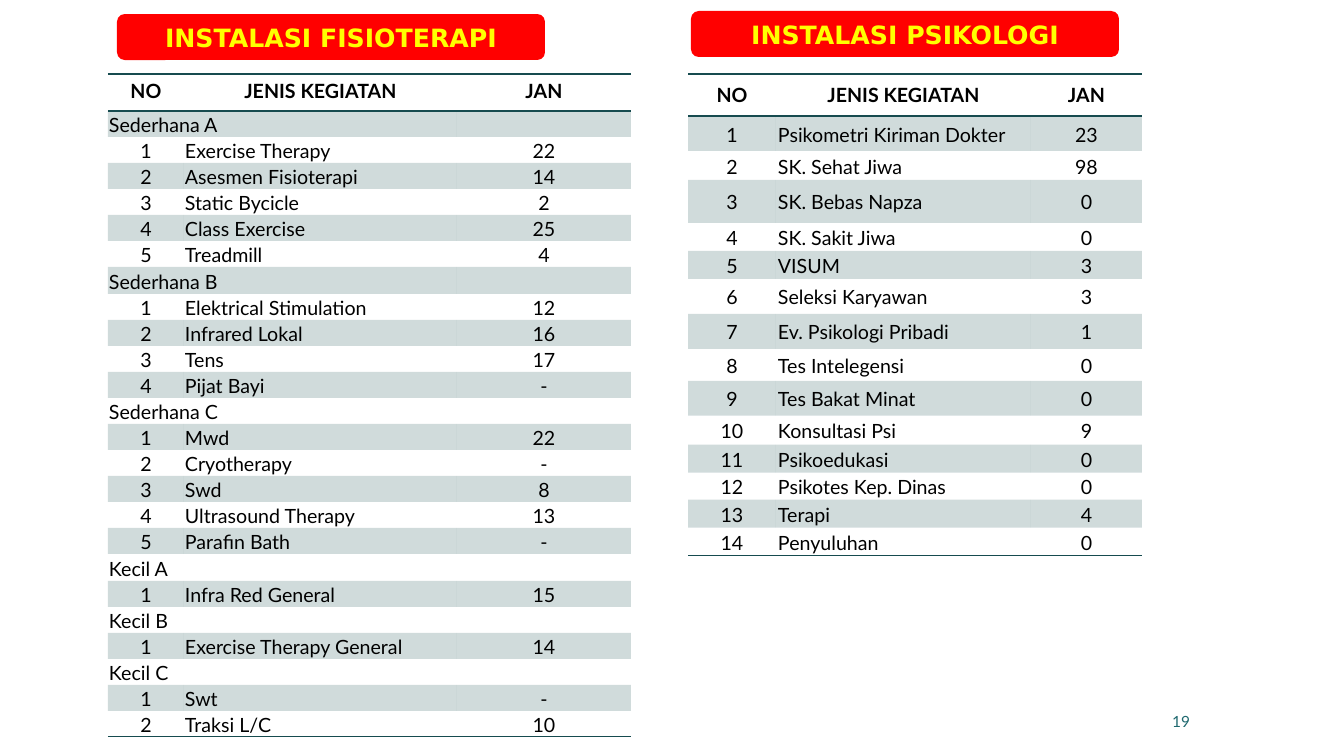
from lxml import etree
from pptx import Presentation
from pptx.dml.color import RGBColor
from pptx.enum.shapes import MSO_SHAPE
from pptx.enum.text import MSO_ANCHOR, PP_ALIGN
from pptx.oxml import parse_xml
from pptx.oxml.ns import nsdecls, qn
from pptx.util import Pt

PX = 9071.43  # EMU per px
COLORS = {"teal": "164B4F", "number": "1F696F", "red": "FF0000",
          "yellow": "FFFF00", "black": "000000", "white": "FFFFFF"}
NO_STYLE = "{2D5ABB26-0587-4C30-8999-92F81FD0307C}"
HEADER = ("NO", "JENIS KEGIATAN", "JAN")


def px(value):
    return round(value * PX)


def write(holder, text, size=14, font="Lato", color="black", bold=False,
          align=PP_ALIGN.CENTER):
    paragraph = holder.text_frame.paragraphs[0]
    paragraph.alignment = align
    # Keeps the line height of blank cells at the text size
    paragraph._p.get_or_add_endParaRPr().set("sz", str(size * 100))
    if text:
        run = paragraph.add_run()
        run.text = text
        run.font.size = Pt(size)
        run.font.name = font
        run.font.bold = bold
        run.font.color.rgb = RGBColor.from_string(COLORS[color])


# Activities; a row with one entry is a group heading
physiotherapy = [
    ("Sederhana A",),
    ("1", "Exercise Therapy", "22"),
    ("2", "Asesmen Fisioterapi", "14"),
    ("3", "Static Bycicle", "2"),
    ("4", "Class Exercise", "25"),
    ("5", "Treadmill", "4"),
    ("Sederhana B",),
    ("1", "Elektrical Stimulation", "12"),
    ("2", "Infrared Lokal", "16"),
    ("3", "Tens", "17"),
    ("4", "Pijat Bayi", "-"),
    ("Sederhana C",),
    ("1", "Mwd", "22"),
    ("2", "Cryotherapy", "-"),
    ("3", "Swd", "8"),
    ("4", "Ultrasound Therapy", "13"),
    ("5", "Parafin Bath", "-"),
    ("Kecil A",),
    ("1", "Infra Red General", "15"),
    ("Kecil B",),
    ("1", "Exercise Therapy General", "14"),
    ("Kecil C",),
    ("1", "Swt", "-"),
    ("2", "Traksi L/C", "10"),
]
psychology_counts = [
    ("Psikometri Kiriman Dokter", "23"), ("SK. Sehat Jiwa", "98"),
    ("SK. Bebas Napza", "0"), ("SK. Sakit Jiwa", "0"), ("VISUM", "3"),
    ("Seleksi Karyawan", "3"), ("Ev. Psikologi Pribadi", "1"),
    ("Tes Intelegensi", "0"), ("Tes Bakat Minat", "0"),
    ("Konsultasi Psi", "9"), ("Psikoedukasi", "0"),
    ("Psikotes Kep. Dinas", "0"), ("Terapi", "4"), ("Penyuluhan", "0"),
]
psychology = [(str(number), *entry)
              for number, entry in enumerate(psychology_counts, 1)]

# The 24 physiotherapy rows share 626 px evenly
row_edges = [round(i * 626 / 24) for i in range(25)]
physiotherapy_heights = [37] + [b - a for a, b in zip(row_edges, row_edges[1:])]
psychology_heights = [42, 35, 29, 43, 28, 28, 35, 35, 32, 35, 29, 28, 27, 28, 28]

# Left, top, widths, heights, rows, header and body margins (l, t, r, b), anchors
tables = [
    (108, 74, (76, 273, 174), physiotherapy_heights, physiotherapy,
     (10, 5, 10, 5), (1, 1, 1, 0), MSO_ANCHOR.TOP, MSO_ANCHOR.BOTTOM),
    (688, 74, (88, 255, 111), psychology_heights, psychology,
     (20, 7, 20, 7), (2, 2, 2, 0), MSO_ANCHOR.MIDDLE, MSO_ANCHOR.MIDDLE),
]

prs = Presentation()
prs.slide_width, prs.slide_height = px(1344), px(756)
slide = prs.slides.add_slide(prs.slide_layouts[6])
slide.background.fill.solid()
slide.background.fill.fore_color.rgb = RGBColor.from_string(COLORS["white"])

# Activity tables
for (left, top, widths, heights, activities, head_margins, body_margins,
     head_anchor, body_anchor) in tables:
    rows = [HEADER] + activities
    table = slide.shapes.add_table(len(rows), 3, px(left), px(top),
                                   px(sum(widths)), px(sum(heights))).table
    table._tbl.tblPr.find(qn("a:tableStyleId")).text = NO_STYLE
    for column, width in zip(table.columns, widths):
        column.width = px(width)
    for r, (entries, height) in enumerate(zip(rows, heights)):
        table.rows[r].height = px(height)
        is_header, is_group = r == 0, len(entries) == 1
        if is_group:
            table.cell(r, 0).merge(table.cell(r, 1))
            entries = (entries[0], "", "")
        for c, entry in enumerate(entries):
            cell = table.cell(r, c)
            margins = head_margins if is_header else body_margins
            (cell.margin_left, cell.margin_top,
             cell.margin_right, cell.margin_bottom) = map(px, margins)
            cell.vertical_anchor = head_anchor if is_header else body_anchor
            flush_left = is_group or (c == 1 and not is_header)
            write(cell, entry, bold=is_header,
                  align=PP_ALIGN.LEFT if flush_left else PP_ALIGN.CENTER)

            # Odd rows carry the translucent band
            properties = cell._tc.get_or_add_tcPr()
            if r % 2:
                cell.fill.solid()
                cell.fill.fore_color.rgb = RGBColor.from_string(COLORS["teal"])
                tint = properties.find(".//" + qn("a:srgbClr"))
                etree.SubElement(tint, qn("a:alpha")).set("val", "20000")
            else:
                cell.fill.background()

            # Rules around the header and under the last row
            sides = ("lnB", "lnT") if is_header else ("lnB",) if r == len(rows) - 1 else ()
            for side in sides:
                properties.insert(0, parse_xml(
                    f'<a:{side} {nsdecls("a")} w="12700"><a:solidFill>'
                    f'<a:srgbClr val="{COLORS["teal"]}"/></a:solidFill></a:{side}>'))

# Headings
for heading, left, top in (("INSTALASI FISIOTERAPI", 117, 14),
                           ("INSTALASI PSIKOLOGI", 691, 11)):
    banner = slide.shapes.add_shape(MSO_SHAPE.ROUNDED_RECTANGLE,
                                    px(left), px(top), px(428), px(46))
    banner.shadow.inherit = False
    banner.fill.solid()
    banner.fill.fore_color.rgb = RGBColor.from_string(COLORS["red"])
    banner.line.fill.background()
    banner.text_frame.vertical_anchor = MSO_ANCHOR.MIDDLE
    write(banner, heading, size=18, font="DejaVu Sans", color="yellow", bold=True)

# Page number
page_number = slide.shapes.add_textbox(px(887), px(701), px(313), px(40))
page_number.text_frame.word_wrap = True
page_number.text_frame.vertical_anchor = MSO_ANCHOR.MIDDLE
write(page_number, "19", size=11, color="number", align=PP_ALIGN.RIGHT)

prs.save("out.pptx")
